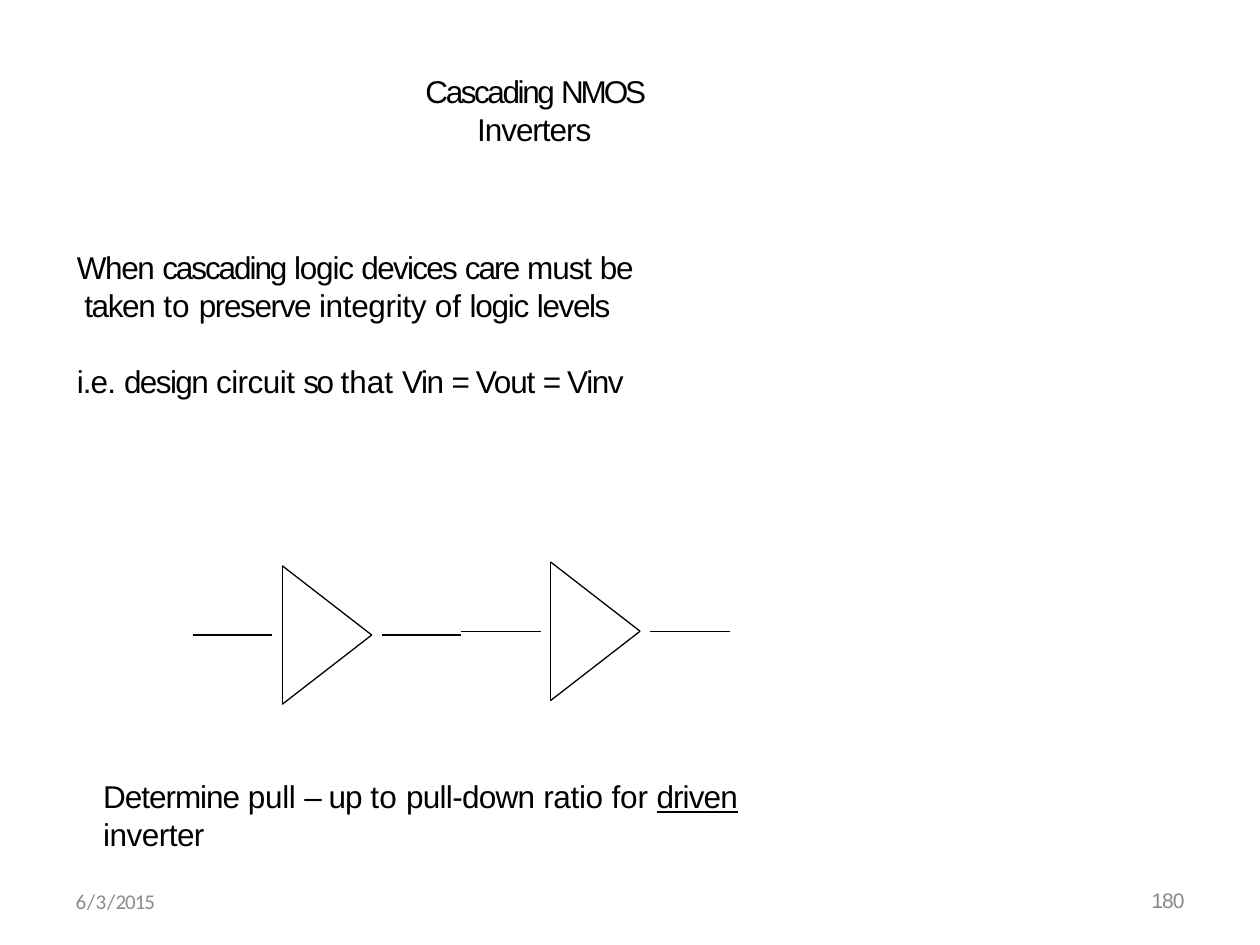
from lxml.etree import SubElement
from pptx import Presentation
from pptx.dml.color import RGBColor
from pptx.enum.shapes import MSO_CONNECTOR
from pptx.enum.text import MSO_ANCHOR, MSO_AUTO_SIZE, PP_ALIGN
from pptx.oxml.ns import qn
from pptx.util import Inches, Pt


def color(value):
    return RGBColor.from_string(value)


def add_text(slide, box, paragraphs, size=18, font="Arial", fill="000000",
             align=PP_ALIGN.LEFT, anchor=MSO_ANCHOR.TOP, inset=0.01,
             indents=((0.01, 0),), before=(1,), line_spacing=None):
    shape = slide.shapes.add_textbox(*map(Inches, box))
    frame = shape.text_frame
    frame.word_wrap = True
    frame.auto_size = MSO_AUTO_SIZE.SHAPE_TO_FIT_TEXT
    frame.vertical_anchor = anchor
    frame.margin_left = frame.margin_right = frame.margin_bottom = 0
    frame.margin_top = Inches(inset)
    for index, (runs, (margin, indent), space) in enumerate(zip(paragraphs, indents, before)):
        paragraph = frame.add_paragraph() if index else frame.paragraphs[0]
        paragraph.alignment = align
        paragraph.space_before = Pt(space)
        if line_spacing:
            paragraph.line_spacing = Pt(line_spacing)
        properties = paragraph._p.get_or_add_pPr()
        properties.set("marL", str(Inches(margin)))
        properties.set("indent", str(Inches(indent)))
        for text, spacing, *underline in runs:
            run = paragraph.add_run()
            run.text = text
            run.font.size = Pt(size)
            run.font.name = font
            run.font.color.rgb = color(fill)
            if underline:
                run.font.underline = True
            run._r.get_or_add_rPr().set("spc", str(round(spacing * 100)))
    return shape


def add_line(slide, start, end):
    connector = slide.shapes.add_connector(
        MSO_CONNECTOR.STRAIGHT, *map(Inches, (*start, *end)))
    connector.line.color.rgb = color("000000")
    connector.line.width = Pt(0.75)
    SubElement(connector._element.spPr, qn("a:effectLst"))


def add_inverter(slide, left, top, width, height):
    wire, gap = 0.63, 0.08
    right, middle, bottom = left + width, top + height / 2, top + height
    base, tip = left + wire + gap, right - wire - gap
    corners = [(base, top), (tip, middle), (base, bottom)]
    add_line(slide, (left, middle), (left + wire, middle))
    for start, end in zip(corners, corners[1:] + corners[:1]):
        add_line(slide, start, end)
    add_line(slide, (right - wire, middle), (right, middle))


def add_title(slide, box):
    runs = [("Cascading ", -1.4), ("NMOS ", -1.8), ("Inverters", -0.6)]
    add_text(slide, box, [runs], align=PP_ALIGN.CENTER, anchor=MSO_ANCHOR.MIDDLE)


def add_body(slide, box):
    advice = [("When ", -0.8), ("cascading ", -1.2), ("logic ", -0.7), ("devices ", -1),
              ("care ", -1.1), ("must ", -0.6), ("be taken ", -0.8), ("to ", 0.1),
              ("preserve ", -0.8), ("integrity ", -0.2), ("of ", -0.1),
              ("logic ", -0.7), ("levels", -0.8)]
    design = [("i.e. ", -0.5), ("design ", -0.9), ("circuit ", -0.3), ("so ", -1.3),
              ("that ", 0), ("Vin ", -0.8), ("= ", -1.6), ("Vout ", -0.7),
              ("= ", -1.6), ("Vinv", -0.8)]
    add_text(slide, box, [advice, design],
             indents=((0.07, -0.06), (0.01, 0)), before=(1, 21.7))


def add_task(slide, box):
    runs = [("Determine ", -0.6), ("pull ", -0.2), ("– ", -1.1), ("up ", -0.6),
            ("to ", 0.1), ("pull-down ", -0.4), ("ratio ", -0.2), ("for ", -0.1),
            ("driven", -0.5, True), (" ", -0.9), ("inverter", -0.3)]
    add_text(slide, box, [runs])


def add_footer(slide, date_box, number_box):
    date = [("6", 0.5), ("/", 0.2), ("3", 0.5), ("/", 0.2), ("2015", -0.6)]
    footer_format = dict(size=12, inset=0, before=(0,), line_spacing=12.4)
    add_text(slide, date_box, [date], font="Calibri", fill="8C8C8C",
             anchor=MSO_ANCHOR.MIDDLE, **footer_format)
    add_text(slide, number_box, [[("180", -0.6)]], fill="888888", **footer_format)


def main():
    presentation = Presentation()
    presentation.slide_width = Inches(10)
    presentation.slide_height = Inches(7.5)
    slide = presentation.slides.add_slide(presentation.slide_layouts[6])
    add_body(slide, (0.6, 1.96, 5, 1.23))
    add_title(slide, (2.88, 0.7, 2.71, 0.33))
    for left, top in ((1.53, 4.49), (3.66, 4.46)):
        add_inverter(slide, left, top, 2.13, 1.1)
    add_task(slide, (0.81, 6.16, 5.84, 0.33))
    add_footer(slide, (0.59, 7.07, 0.67, 0.19), (9.13, 7.07, 0.28, 0.19))
    presentation.save("out.pptx")


if __name__ == "__main__":
    main()
